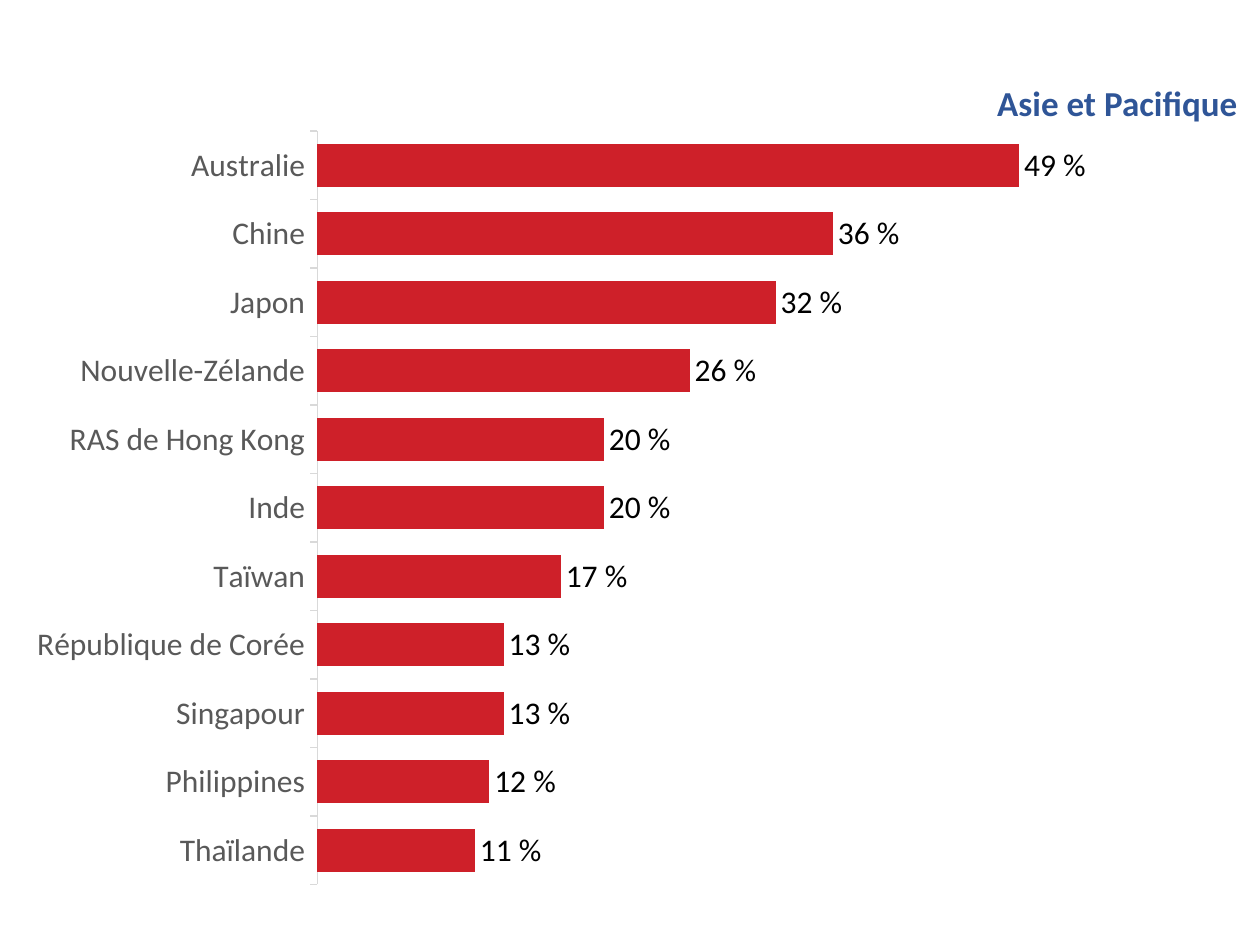
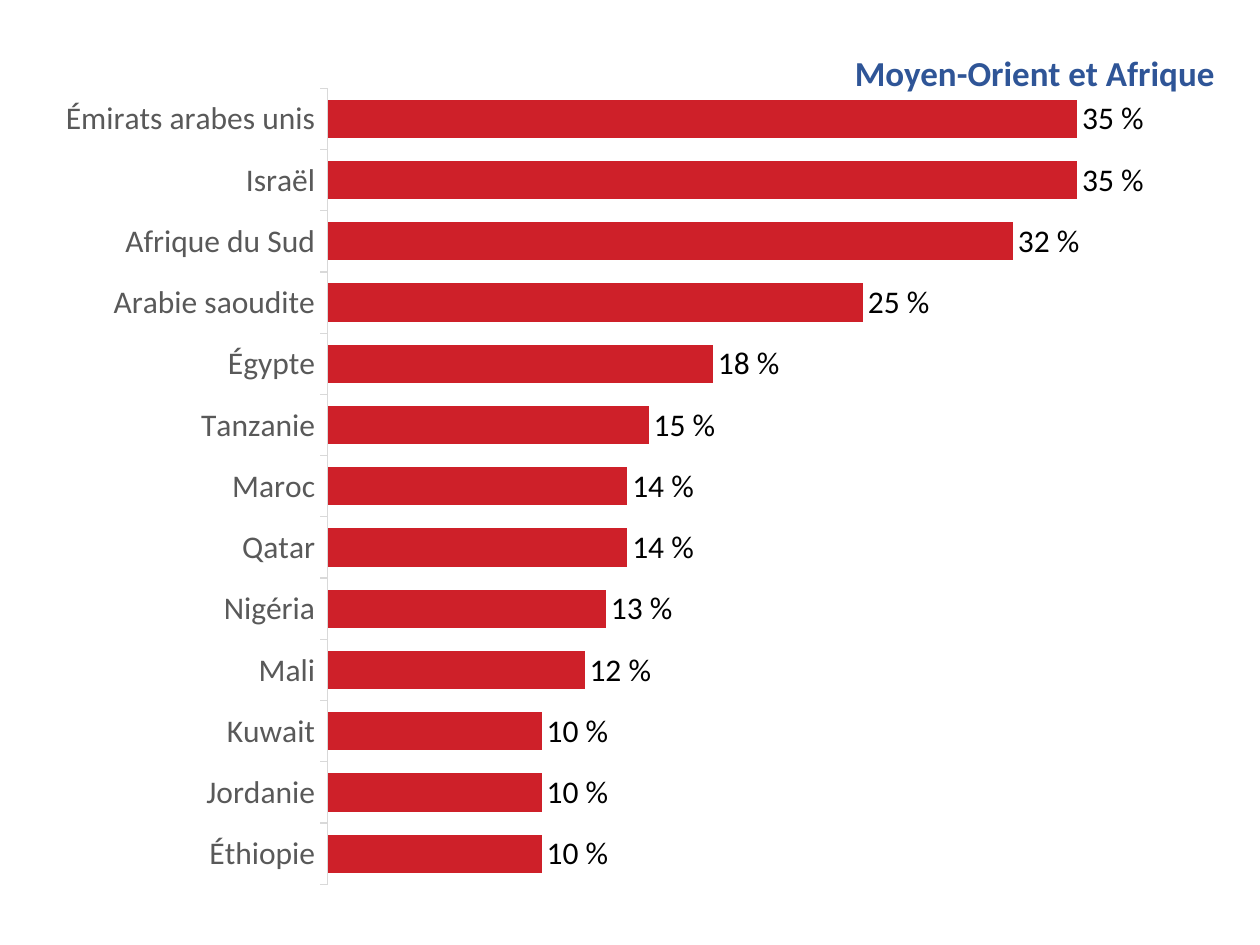
"""Build two slides of ranked country percentages, one bar chart per region."""
from dataclasses import dataclass

from lxml.etree import SubElement
from pptx import Presentation
from pptx.chart.data import CategoryChartData
from pptx.dml.color import RGBColor
from pptx.enum.chart import XL_CHART_TYPE, XL_LABEL_POSITION, XL_TICK_LABEL_POSITION, XL_TICK_MARK
from pptx.enum.text import MSO_AUTO_SIZE, PP_ALIGN
from pptx.oxml.ns import qn
from pptx.util import Emu, Pt

EMU_PER_PX = 9144


@dataclass(frozen=True)
class Theme:
    font: str = "Calibri"
    heading: str = "2F5597"
    bar: str = "CE2029"
    category: str = "595959"
    value: str = "000000"
    axis: str = "D9D9D9"
    heading_size: int = 20
    label_size: int = 18
    base_size: int = 10
    axis_width: float = 0.75


THEME = Theme()

REGIONS = [
    {
        "heading": "Asie et Pacifique",
        "heading_box": (779, 60, 213, 44),
        "chart_box": (-169, 77, 1143, 633),
        "plot_box": (252, 104, 682, 598),
        "axis_maximum": 0.6,
        "shares": {
            "Australie": 49, "Chine": 36, "Japon": 32, "Nouvelle-Zélande": 26,
            "RAS de Hong Kong": 20, "Inde": 20, "Taïwan": 17,
            "République de Corée": 13, "Singapour": 13, "Philippines": 12,
            "Thaïlande": 11,
        },
    },
    {
        "heading": "Moyen-Orient et Afrique",
        "heading_box": (666, 36, 308, 44),
        "chart_box": (8, 51, 966, 659),
        "plot_box": (260, 70, 680, 632),
        "axis_maximum": 0.4,
        "shares": {
            "Émirats arabes unis": 35, "Israël": 35, "Afrique du Sud": 32,
            "Arabie saoudite": 25, "Égypte": 18, "Tanzanie": 15, "Maroc": 14,
            "Qatar": 14, "Nigéria": 13, "Mali": 12, "Kuwait": 10,
            "Jordanie": 10, "Éthiopie": 10,
        },
    },
]


def px(length):
    return Emu(length * EMU_PER_PX)


def apply_format(target, values):
    for name, value in values.items():
        setattr(target, name, value)


def style_font(font, size, color, bold=False):
    apply_format(font, {"name": THEME.font, "size": Pt(size), "bold": bold})
    font.color.rgb = RGBColor.from_string(color)


def add_heading(page, text, bounds):
    box = page.shapes.add_textbox(*map(px, bounds))
    frame = box.text_frame
    apply_format(frame, {"word_wrap": False, "auto_size": MSO_AUTO_SIZE.SHAPE_TO_FIT_TEXT})
    para = frame.paragraphs[0]
    para.alignment = PP_ALIGN.RIGHT
    span = para.add_run()
    span.text = text
    style_font(span.font, THEME.heading_size, THEME.heading, bold=True)


def place_plot(chart, chart_box, plot_box):
    left, top, width, height = chart_box
    plot_left, plot_top, plot_width, plot_height = plot_box
    area = chart.element.find(".//" + qn("c:plotArea"))
    for layout in area.findall(qn("c:layout")):
        area.remove(layout)
    layout = SubElement(area, qn("c:layout"))
    area.insert(0, layout)
    manual = SubElement(layout, qn("c:manualLayout"))
    settings = {
        "layoutTarget": "inner", "xMode": "edge", "yMode": "edge",
        "x": (plot_left - left) / width, "y": (plot_top - top) / height,
        "w": plot_width / width, "h": plot_height / height,
    }
    for name, value in settings.items():
        SubElement(manual, qn("c:" + name)).set("val", str(value))


def style_axes(chart, maximum):
    categories = chart.category_axis
    apply_format(categories, {
        "reverse_order": True,
        "has_major_gridlines": False,
        "major_tick_mark": XL_TICK_MARK.OUTSIDE,
        "minor_tick_mark": XL_TICK_MARK.NONE,
    })
    style_font(categories.tick_labels.font, THEME.label_size, THEME.category)
    categories.format.line.color.rgb = RGBColor.from_string(THEME.axis)
    categories.format.line.width = Pt(THEME.axis_width)
    values = chart.value_axis
    apply_format(values, {
        "minimum_scale": 0,
        "maximum_scale": maximum,
        "has_major_gridlines": False,
        "major_tick_mark": XL_TICK_MARK.OUTSIDE,
        "minor_tick_mark": XL_TICK_MARK.NONE,
        "tick_label_position": XL_TICK_LABEL_POSITION.NONE,
    })
    values.format.line.fill.background()


def style_bars(plot):
    apply_format(plot, {"gap_width": 60, "vary_by_categories": False, "has_data_labels": True})
    apply_format(plot.data_labels, {
        "show_value": True,
        "number_format": '0" "%',
        "number_format_is_linked": False,
        "position": XL_LABEL_POSITION.OUTSIDE_END,
    })
    style_font(plot.data_labels.font, THEME.label_size, THEME.value)
    fill = plot.series[0].format.fill
    fill.solid()
    fill.fore_color.rgb = RGBColor.from_string(THEME.bar)


def add_share_chart(page, region):
    data = CategoryChartData(number_format="0%")
    data.categories = list(region["shares"])
    data.add_series("Series 1", [share / 100 for share in region["shares"].values()])
    bounds = map(px, region["chart_box"])
    chart = page.shapes.add_chart(XL_CHART_TYPE.BAR_CLUSTERED, *bounds, data).chart
    apply_format(chart, {"has_title": False, "has_legend": False})
    style_font(chart.font, THEME.base_size, THEME.value)
    style_axes(chart, region["axis_maximum"])
    style_bars(chart.plots[0])
    place_plot(chart, region["chart_box"], region["plot_box"])


def main():
    deck = Presentation()
    apply_format(deck, {"slide_width": px(1000), "slide_height": px(750)})
    for region in REGIONS:
        page = deck.slides.add_slide(deck.slide_layouts[6])
        add_share_chart(page, region)
        add_heading(page, region["heading"], region["heading_box"])
    deck.save("out.pptx")


if __name__ == "__main__":
    main()
